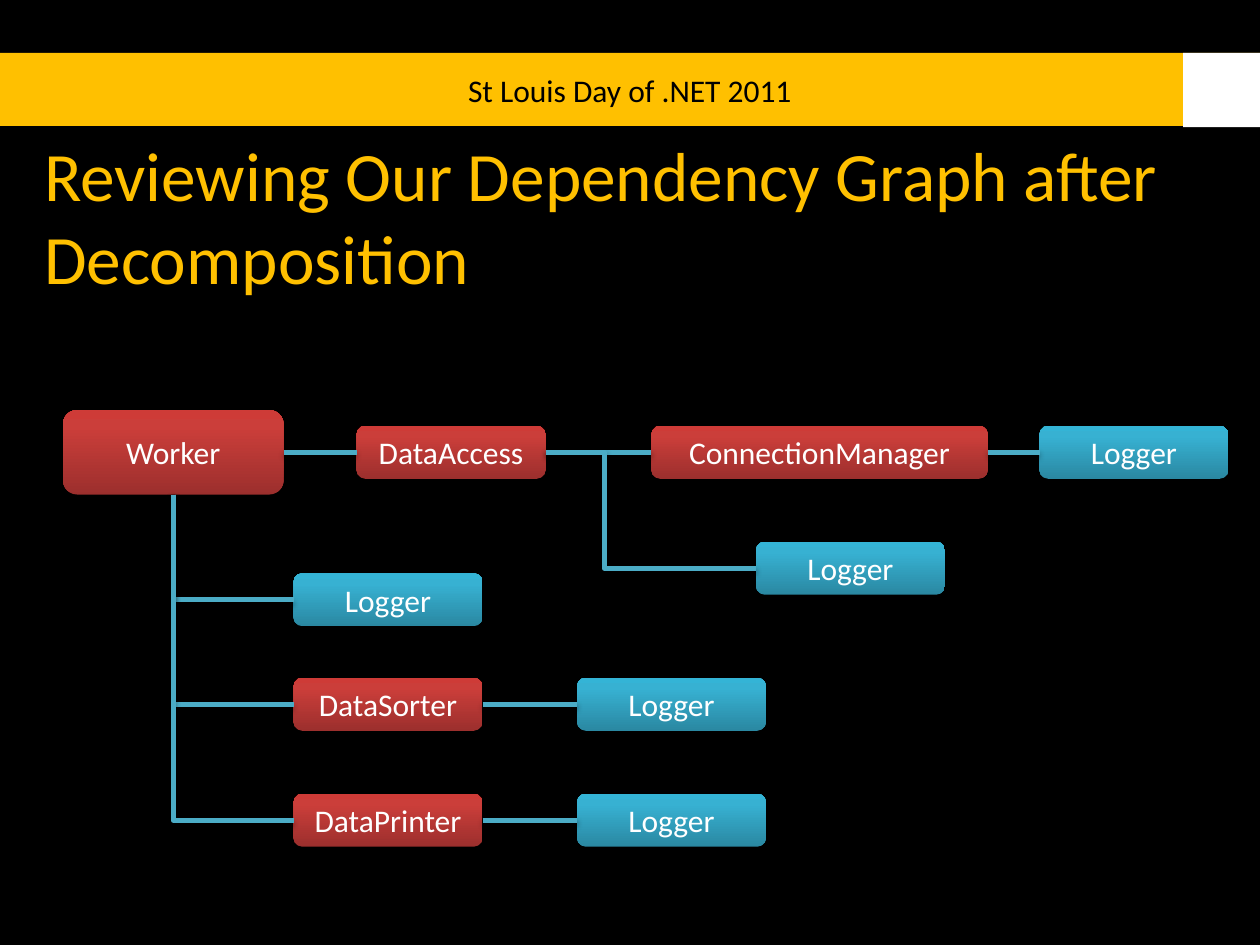
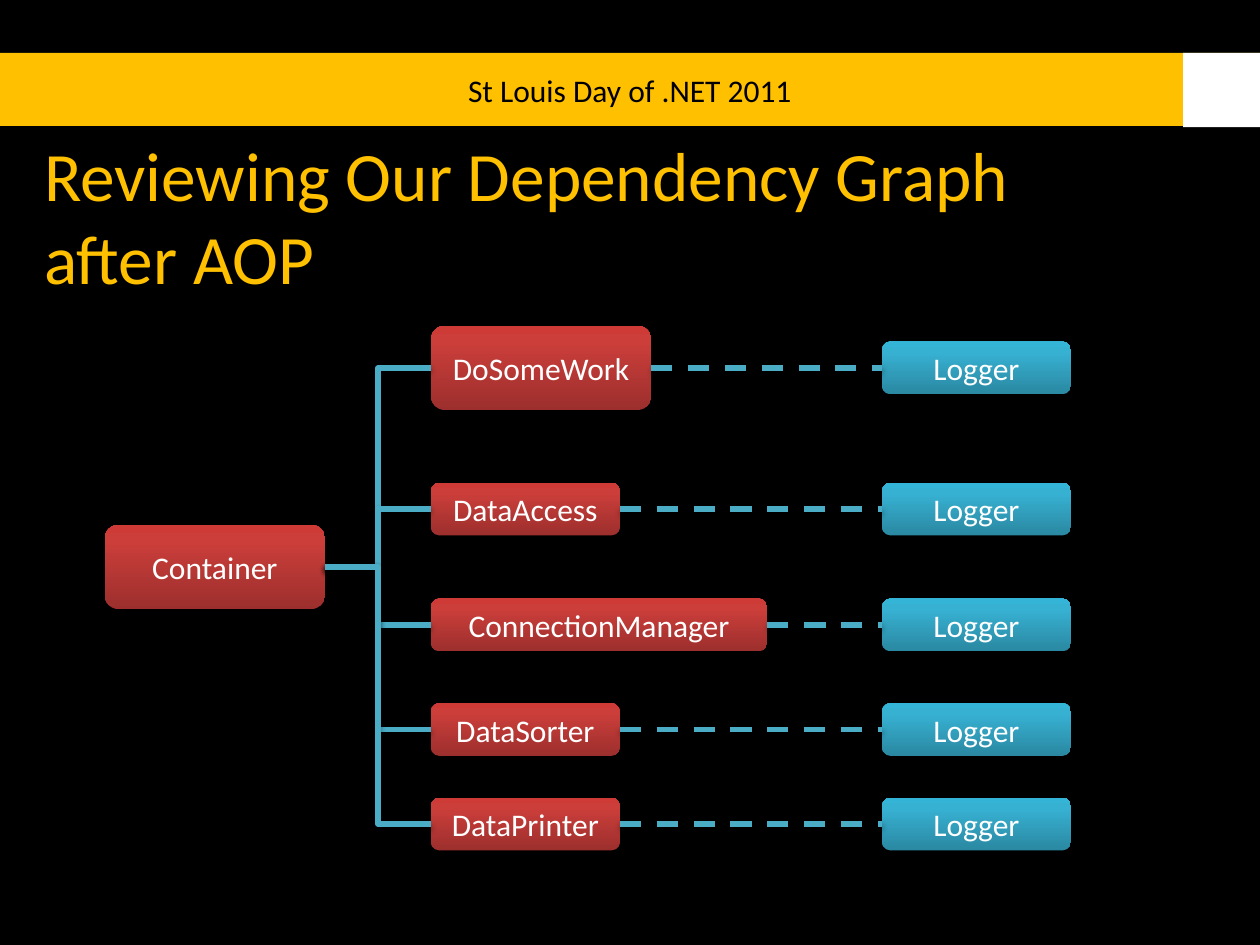
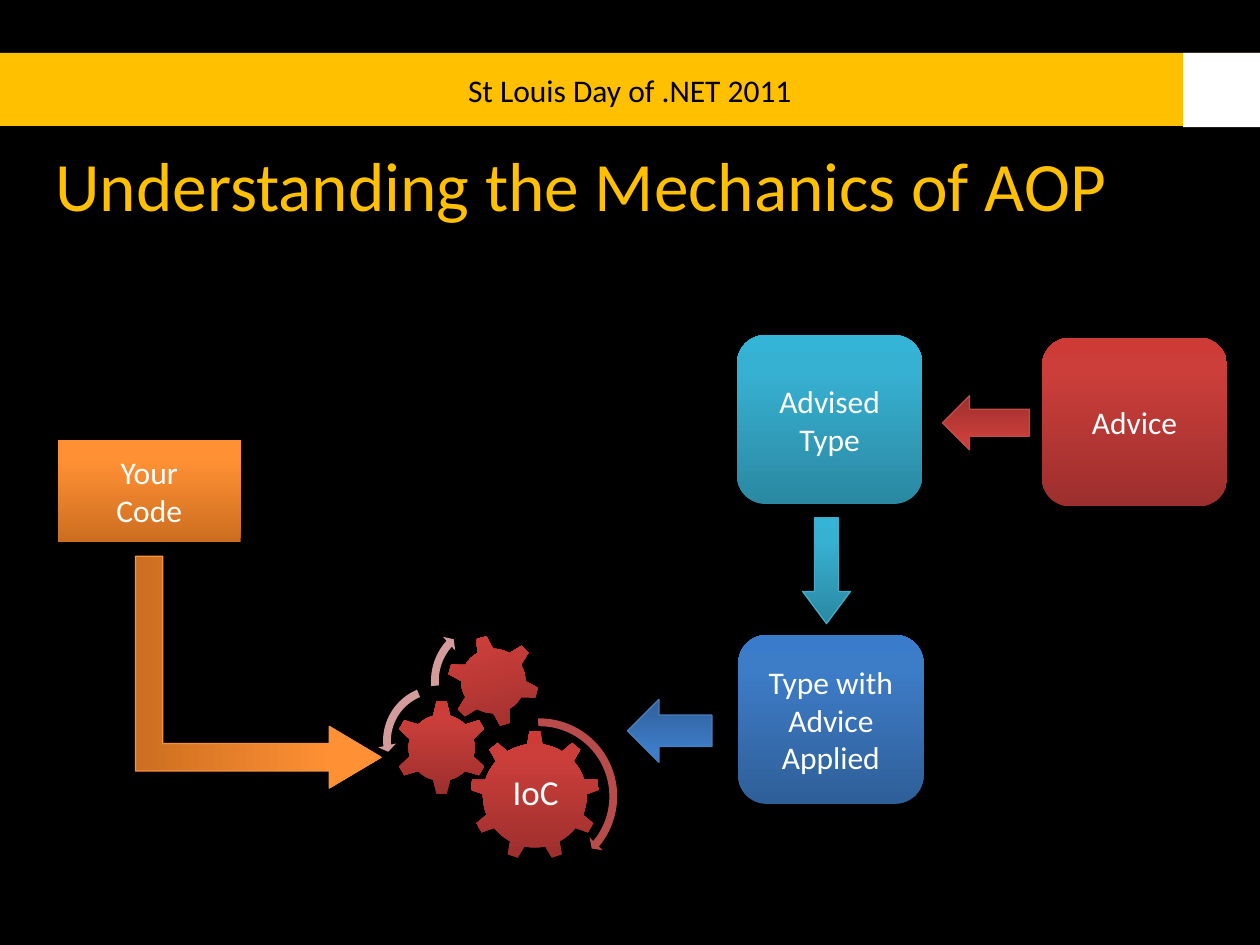
from copy import deepcopy
from dataclasses import dataclass

from lxml.etree import SubElement
from pptx import Presentation
from pptx.dml.color import RGBColor
from pptx.enum.dml import MSO_LINE
from pptx.enum.shapes import MSO_CONNECTOR, MSO_SHAPE
from pptx.enum.text import MSO_ANCHOR, MSO_AUTO_SIZE, PP_ALIGN
from pptx.oxml.ns import qn
from pptx.util import Inches, Pt


@dataclass(frozen=True)
class Gloss:
    """A bottom-to-top gradient and the outline that goes with it."""
    dark: str
    light: str
    tip: str
    edge: str


@dataclass(frozen=True)
class Theme:
    font: str = "Calibri"
    title_size: float = 39.6
    gear_size: float = 20
    text_size: float = 18
    background: str = "000000"
    accent: str = "FFC000"
    white: str = "FFFFFF"
    link: str = "4BACC6"
    spin_dark: str = "B74C4A"
    spin_pale: str = "D39C9B"
    red: Gloss = Gloss("9C2F2D", "CB3E3A", "CE3B37", "BF4C48")
    teal: Gloss = Gloss("2A88A2", "37B1D2", "34B4D6", "46AAC5")
    orange: Gloss = Gloss("CC6E20", "FF9034", "FF9136", "F69240")
    blue: Gloss = Gloss("2F5F99", "3D7CC7", "3A7CCB", "4B7EBC")


def rgb(code):
    return RGBColor.from_string(code)


def add_shadow(effects):
    shadow = SubElement(effects, qn("a:outerShdw"), blurRad="40000", dist="23000",
                        dir="5400000", rotWithShape="0")
    colour = SubElement(shadow, qn("a:srgbClr"), val="000000")
    SubElement(colour, qn("a:alpha"), val="35000")


class Deck:
    def __init__(self, theme):
        self.theme = theme
        self.deck = Presentation()
        self.deck.slide_width, self.deck.slide_height = Inches(10), Inches(7.5)
        self.layout = self.deck.slide_layouts.get_by_name("Title Only")
        self.page = None
        fill = self.deck.slide_master.background.fill
        fill.solid()
        fill.fore_color.rgb = rgb(theme.background)

    def add_page(self, title, left, top, width, height):
        self.page = self.deck.slides.add_slide(self.layout)
        box = self.page.shapes.title
        box.left, box.top = Inches(left), Inches(top)
        box.width, box.height = Inches(width), Inches(height)
        self.add_text(box, title, self.theme.title_size, self.theme.accent,
                      PP_ALIGN.LEFT, MSO_ANCHOR.TOP)

    def add_text(self, box, text, size, colour, align=PP_ALIGN.CENTER,
                 anchor=MSO_ANCHOR.MIDDLE):
        frame = box.text_frame
        frame.word_wrap = True
        frame.auto_size = MSO_AUTO_SIZE.NONE
        frame.vertical_anchor = anchor
        para = frame.paragraphs[0]
        para.alignment = align
        span = para.add_run()
        span.text = text
        span.font.name = self.theme.font
        span.font.size = Pt(size)
        span.font.color.rgb = rgb(colour)
        return para

    def place(self, kind, frame, turn=0, adjust=()):
        shape = self.page.shapes.add_shape(kind, *map(Inches, frame))
        shape.rotation = turn
        for index, value in enumerate(adjust):
            shape.adjustments[index] = value
        shape.line.fill.background()
        shape.shadow.inherit = False
        return shape

    def flat(self, kind, frame, colour, **options):
        shape = self.place(kind, frame, **options)
        shape.fill.solid()
        shape.fill.fore_color.rgb = rgb(colour)
        return shape

    def glossy(self, kind, frame, gloss, text="", outlined=False, **options):
        shape = self.place(kind, frame, **options)
        shape.fill.gradient()
        shape.fill.gradient_angle = 90
        properties = shape._element.spPr
        stops = properties.find(qn("a:gradFill")).find(qn("a:gsLst"))
        stops.append(deepcopy(stops[-1]))
        looks = ((0, gloss.dark), (0.8, gloss.light), (1, gloss.tip))
        for stop, (position, colour) in zip(shape.fill.gradient_stops, looks):
            stop.position = position
            stop.color.rgb = rgb(colour)
        if outlined:
            shape.line.color.rgb = rgb(gloss.edge)
            shape.line.width = Pt(0.75)
        add_shadow(properties.find(qn("a:effectLst")))
        if text:
            self.add_text(shape, text, self.theme.text_size, self.theme.white)
        return shape

    def node(self, text, left, middle, width=1.5, height=0.42, gloss=None):
        return self.glossy(MSO_SHAPE.ROUNDED_RECTANGLE,
                           (left, middle - height / 2, width, height),
                           gloss or self.theme.red, text)

    def logger(self, left, middle):
        return self.node("Logger", left, middle, gloss=self.theme.teal)

    def link(self, source, target, bend=0.5, dashed=False, from_below=False):
        """Join source to the left side of target; bend is where the elbow turns."""
        if from_below:
            start = source.left + source.width // 2, source.top + source.height
        else:
            start = source.left + source.width, source.top + source.height // 2
        end = target.left, target.top + target.height // 2
        line = self.page.shapes.add_connector(MSO_CONNECTOR.ELBOW, *start, *end)
        line.line.color.rgb = rgb(self.theme.link)
        line.line.width = Pt(3)
        if dashed:
            line.line.dash_style = MSO_LINE.DASH
        properties = line._element.spPr
        guides = properties.find(qn("a:prstGeom")).find(qn("a:avLst"))
        SubElement(guides, qn("a:gd"), name="adj1", fmla=f"val {round(bend * 100000)}")
        add_shadow(SubElement(properties, qn("a:effectLst")))

    def label(self, text, frame, size, inset):
        box = self.page.shapes.add_textbox(*map(Inches, frame))
        area = box.text_frame
        area.margin_left = area.margin_right = Inches(inset)
        area.margin_top = area.margin_bottom = Inches(inset)
        self.add_text(box, text, size, self.theme.white).line_spacing = 0.9

    def add_master_band(self):
        """Draw the event band on the current page and move it to the master."""
        band = self.flat(MSO_SHAPE.RECTANGLE, (0, 0.42, 10, 0.58), self.theme.accent)
        self.add_text(band, "St Louis Day of .NET 2011", self.theme.text_size,
                      self.theme.background)
        corner = self.flat(MSO_SHAPE.RECTANGLE, (9.39, 0.42, 0.61, 0.59), self.theme.white)
        for number, shape in enumerate((band, corner), start=20):
            shape._element.nvSpPr.cNvPr.set("id", str(number))
            self.deck.slide_master.shapes._spTree.append(shape._element)


def decomposition_page(deck):
    deck.add_page("Reviewing Our Dependency Graph after Decomposition", 0.25, 1, 9.08, 0.58)
    deck.add_master_band()
    top_row = 3.59
    worker = deck.node("Worker", 0.5, top_row, 1.75, 0.67)
    access = deck.node("DataAccess", 2.83, top_row)
    manager = deck.node("ConnectionManager", 5.17, top_row, 2.67)
    deck.link(worker, access)
    deck.link(access, manager)
    deck.link(manager, deck.logger(8.25, top_row))
    deck.link(access, deck.logger(6, 4.51), bend=0.28)

    deck.link(worker, deck.logger(2.33, 4.76), bend=0, from_below=True)
    for name, middle in (("DataSorter", 5.59), ("DataPrinter", 6.51)):
        part = deck.node(name, 2.33, middle)
        deck.link(worker, part, bend=0, from_below=True)
        deck.link(part, deck.logger(4.58, middle))


def aspect_page(deck):
    deck.add_page("Reviewing Our Dependency Graph after AOP", 0.25, 1, 8.75, 0.58)
    container = deck.node("Container", 0.83, 4.5, 1.75, 0.67)
    parts = (("DoSomeWork", 2.92, 1.75, 0.67), ("DataAccess", 4.04, 1.5, 0.42),
             ("ConnectionManager", 4.96, 2.67, 0.42), ("DataSorter", 5.79, 1.5, 0.42),
             ("DataPrinter", 6.54, 1.5, 0.42))
    for name, middle, width, height in parts:
        part = deck.node(name, 3.42, middle, width, height)
        deck.link(container, part)
        deck.link(part, deck.logger(7, middle), dashed=True)


def mechanics_page(deck):
    theme = deck.theme
    deck.add_page("Understanding the Mechanics of AOP", 0.34, 1.08, 8.82, 0.89)

    for text, left, top, gloss in (("Advised Type", 5.85, 2.66, theme.teal),
                                   ("Advice", 8.27, 2.68, theme.red),
                                   ("Type with Advice Applied", 5.86, 5.04, theme.blue)):
        deck.glossy(MSO_SHAPE.ROUNDED_RECTANGLE, (left, top, 1.47, 1.34), gloss, text)
    deck.glossy(MSO_SHAPE.FLOWCHART_PREDEFINED_PROCESS, (0.46, 3.49, 1.45, 0.81),
                theme.orange, "Your Code")

    for kind, frame, gloss, turn, adjust in (
            (MSO_SHAPE.RIGHT_ARROW, (7.48, 3.14, 0.69, 0.43), theme.red, 180, ()),
            (MSO_SHAPE.BENT_UP_ARROW, (1.13, 4.36, 1.84, 1.95), theme.orange, 90,
             (0.118, 0.133, 0.224)),
            (MSO_SHAPE.DOWN_ARROW, (6.37, 4.11, 0.38, 0.84), theme.teal, 0, (0.5, 0.672)),
            (MSO_SHAPE.RIGHT_ARROW, (4.98, 5.55, 0.67, 0.5), theme.blue, 180, ())):
        deck.glossy(kind, frame, gloss, outlined=True, turn=turn, adjust=adjust)

    for kind, left, top, size, turn in ((MSO_SHAPE.GEAR_9, 3.73, 5.8, 1.03, 0),
                                        (MSO_SHAPE.GEAR_6, 3.13, 5.56, 0.75, 0),
                                        (MSO_SHAPE.GEAR_6, 3.55, 5.04, 0.73, 345)):
        deck.glossy(kind, (left, top, size, size), theme.red, turn=turn)
    deck.label("IoC", (3.94, 6.04, 0.62, 0.53), theme.gear_size, 0.03)

    for kind, left, top, size, colour, adjust in (
            (MSO_SHAPE.CIRCULAR_ARROW, 3.62, 5.66, 1.32, theme.spin_dark,
             (0.047, 2.99, 23.957, 161.508, 0.055)),
            (MSO_SHAPE.LEFT_CIRCULAR_ARROW, 3, 5.4, 0.96, theme.spin_pale,
             (0.065, 4.3, 104.891, 148.378, 0.075)),
            (MSO_SHAPE.CIRCULAR_ARROW, 3.38, 4.89, 1.03, theme.spin_pale,
             (0.06, 3.941, 133.138, 105.082, 0.07))):
        deck.flat(kind, (left, top, size, size), colour, adjust=adjust)


def main():
    deck = Deck(Theme())
    decomposition_page(deck)
    aspect_page(deck)
    mechanics_page(deck)
    deck.deck.save("out.pptx")


if __name__ == "__main__":
    main()
